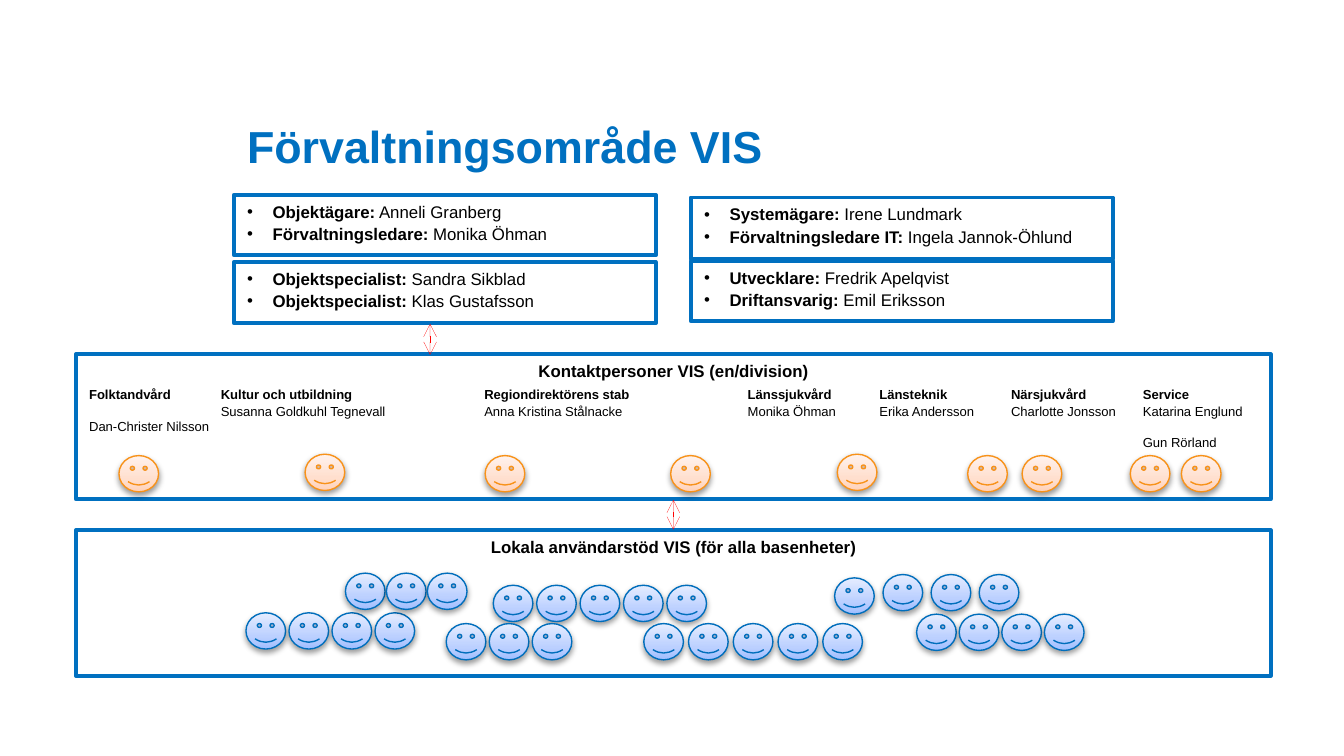
from pptx import Presentation
from pptx.dml.color import RGBColor
from pptx.enum.shapes import MSO_CONNECTOR, MSO_SHAPE
from pptx.enum.text import MSO_ANCHOR, PP_ALIGN
from pptx.oxml import parse_xml
from pptx.oxml.ns import nsdecls
from pptx.util import Inches, Pt

BLUE = RGBColor(0x00, 0x70, 0xC0)
BLACK = RGBColor(0x00, 0x00, 0x00)
WHITE = RGBColor(0xFF, 0xFF, 0xFF)
RED = RGBColor(0xFF, 0x00, 0x00)
FACE_ORANGE = RGBColor(0xF8, 0x92, 0x19)
FACE_BLUE = RGBColor(0x00, 0x6E, 0xBC)
ORANGE_STOPS = (RGBColor(0xFF, 0xD2, 0xBA), RGBColor(0xFF, 0xDF, 0xCE), RGBColor(0xFF, 0xF2, 0xED))
BLUE_STOPS = (RGBColor(0xA0, 0xBE, 0xFF), RGBColor(0xBC, 0xD0, 0xFF), RGBColor(0xE5, 0xED, 0xFF))

deck = Presentation()
deck.slide_width = Inches(10)
deck.slide_height = deck.slide_width * 9 // 16
page = deck.slides.add_slide(deck.slide_layouts[6])
CELL = deck.slide_width / 100  # one column or row of the square page grid


def cells(*counts):
    return [round(count * CELL) for count in counts]


def add_span(para, text, size, bold=False, color=BLACK):
    span = para.add_run()
    span.text = text
    span.font.name, span.font.size, span.font.bold = "Arial", Pt(size), bold
    span.font.color.rgb = color


# Title
title = page.shapes.add_textbox(*cells(17.4, 4.2, 65.4, 9.1)).text_frame
title.word_wrap = True
title.vertical_anchor = MSO_ANCHOR.BOTTOM
add_span(title.paragraphs[0], "Förvaltningsområde VIS", 24, True, BLUE)

# Framed boxes: left, top, width, height
FRAMES = {
    "owners": (17.4, 14.5, 31.4, 4.5),
    "specialists": (17.4, 19.5, 31.4, 4.55),
    "developers": (51.4, 19.4, 31.4, 4.5),
    "system": (51.4, 14.7, 31.4, 4.55),
    "contacts": (5.65, 26.35, 88.9, 10.8),
    "local": (5.65, 39.45, 88.9, 10.85),
}
frames = {}
for name, place in FRAMES.items():
    box = page.shapes.add_shape(MSO_SHAPE.RECTANGLE, *cells(*place))
    box.shadow.inherit = False
    box.fill.solid()
    box.fill.fore_color.rgb = WHITE
    box.line.color.rgb = BLUE
    box.line.width = Pt(2)
    box.text_frame.word_wrap = True
    box.text_frame.vertical_anchor = MSO_ANCHOR.TOP
    frames[name] = box.text_frame

# Bulleted roles
ROLES = {
    "owners": [("Objektägare:", " Anneli Granberg"), ("Förvaltningsledare:", " Monika Öhman")],
    "specialists": [("Objektspecialist: ", "Sandra Sikblad"), ("Objektspecialist: ", "Klas Gustafsson")],
    "developers": [("Utvecklare: ", "Fredrik Apelqvist"), ("Driftansvarig: ", "Emil Eriksson")],
    "system": [("Systemägare: ", "Irene Lundmark"), ("Förvaltningsledare IT: ", "Ingela Jannok-Öhlund")],
}
for name, roles in ROLES.items():
    for index, (role, person) in enumerate(roles):
        para = frames[name].paragraphs[0] if index == 0 else frames[name].add_paragraph()
        para.alignment = PP_ALIGN.LEFT
        para.space_after = Pt(1 if index == 0 else 0)
        props = para._p.get_or_add_pPr()
        props.set("marL", str(Inches(0.19)))
        props.set("indent", str(-Inches(0.19)))
        props.append(parse_xml(f'<a:buFont {nsdecls("a")} typeface="Arial"/>'))
        props.append(parse_xml(f'<a:buChar {nsdecls("a")} char="•"/>'))
        add_span(para, role, 9, True)
        add_span(para, person, 9)

# Headings of the two wide boxes
HEADINGS = {
    "contacts": "Kontaktpersoner VIS (en/division)",
    "local": "Lokala användarstöd VIS (för alla basenheter)",
}
for name, heading in HEADINGS.items():
    para = frames[name].paragraphs[0]
    para.alignment = PP_ALIGN.CENTER
    para.space_after = Pt(1)
    add_span(para, heading, 9, True)

# Contact persons on evenly spaced tab stops
TAB_STEP = 0.98
divisions = frames["contacts"].add_paragraph()
people = frames["contacts"].add_paragraph()
for para in (divisions, people):
    para.alignment = PP_ALIGN.LEFT
    stops = "".join(f'<a:tab pos="{Inches(TAB_STEP * k)}" algn="l"/>' for k in range(1, 9))
    para._p.get_or_add_pPr().append(parse_xml(f'<a:tabLst {nsdecls("a")}>{stops}</a:tabLst>'))
add_span(divisions, "Folktandvård", 7, True)
add_span(divisions, " \t", 9)
add_span(divisions, "Kultur och utbildning  \tRegiondirektörens stab \tLänssjukvård "
                    "\tLänsteknik \tNärsjukvård \tService", 7, True)
add_span(people, "\tSusanna Goldkuhl Tegnevall\tAnna Kristina Stålnacke\tMonika Öhman"
                 "\tErika Andersson\tCharlotte Jonsson\tKatarina Englund", 7)
people.add_line_break()
add_span(people, "Dan-Christer Nilsson", 7)
people.add_line_break()
add_span(people, "\t" * 8 + "Gun Rörland", 7)

# Faces: rows of left, top, count, step
CONTACT_FACES = [(left, 33.9, 1, 0) for left in (8.85, 36.1, 49.9, 72, 76.05, 84.1, 87.9)]
CONTACT_FACES += [(left, 33.8, 1, 0) for left in (22.7, 62.3)]
LOCAL_FACES = [
    (18.3, 45.6, 4, 3.2), (25.7, 42.65, 3, 3.05), (36.7, 43.55, 5, 3.23), (33.2, 46.4, 3, 3.2),
    (47.9, 46.4, 5, 3.33), (62.1, 43, 1, 0), (65.7, 42.75, 3, 3.58), (68.2, 45.7, 4, 3.17),
]
for rows, outline, colors in ((CONTACT_FACES, FACE_ORANGE, ORANGE_STOPS), (LOCAL_FACES, FACE_BLUE, BLUE_STOPS)):
    stops = "".join(
        f'<a:gs pos="{share * 1000}"><a:srgbClr val="{color}"/></a:gs>'
        for share, color in zip((0, 35, 100), colors))
    for left, top, count, step in rows:
        for index in range(count):
            face = page.shapes.add_shape(MSO_SHAPE.SMILEY_FACE, *cells(left + index * step, top, 2.95, 2.7))
            face.line.color.rgb = outline
            face.line.width = Pt(0.75)
            edge = face.line._get_or_add_ln()
            edge.addprevious(parse_xml(
                f'<a:gradFill {nsdecls("a")} rotWithShape="1"><a:gsLst>{stops}</a:gsLst>'
                '<a:lin ang="16200000" scaled="0"/></a:gradFill>'))
            edge.addnext(parse_xml(
                f'<a:effectLst {nsdecls("a")}><a:outerShdw blurRad="{Pt(3.1)}" dist="{Pt(1.6)}" '
                'dir="5400000" rotWithShape="0"><a:srgbClr val="000000"><a:alpha val="38000"/>'
                '</a:srgbClr></a:outerShdw></a:effectLst>'))

# Two-way hairline arrows between the levels
for column, top, bottom in ((50.1, 37.2, 39.4), (32, 24.1, 26.4)):
    arrow = page.shapes.add_connector(MSO_CONNECTOR.STRAIGHT, *cells(column, top, column, bottom))
    arrow.line.color.rgb = RED
    edge = arrow.line._get_or_add_ln()
    edge.set("w", "0")
    for end in ("headEnd", "tailEnd"):
        edge.append(parse_xml(f'<a:{end} {nsdecls("a")} type="arrow"/>'))
    arrow._element.spPr.append(parse_xml(f'<a:effectLst {nsdecls("a")}/>'))

deck.save("out.pptx")
